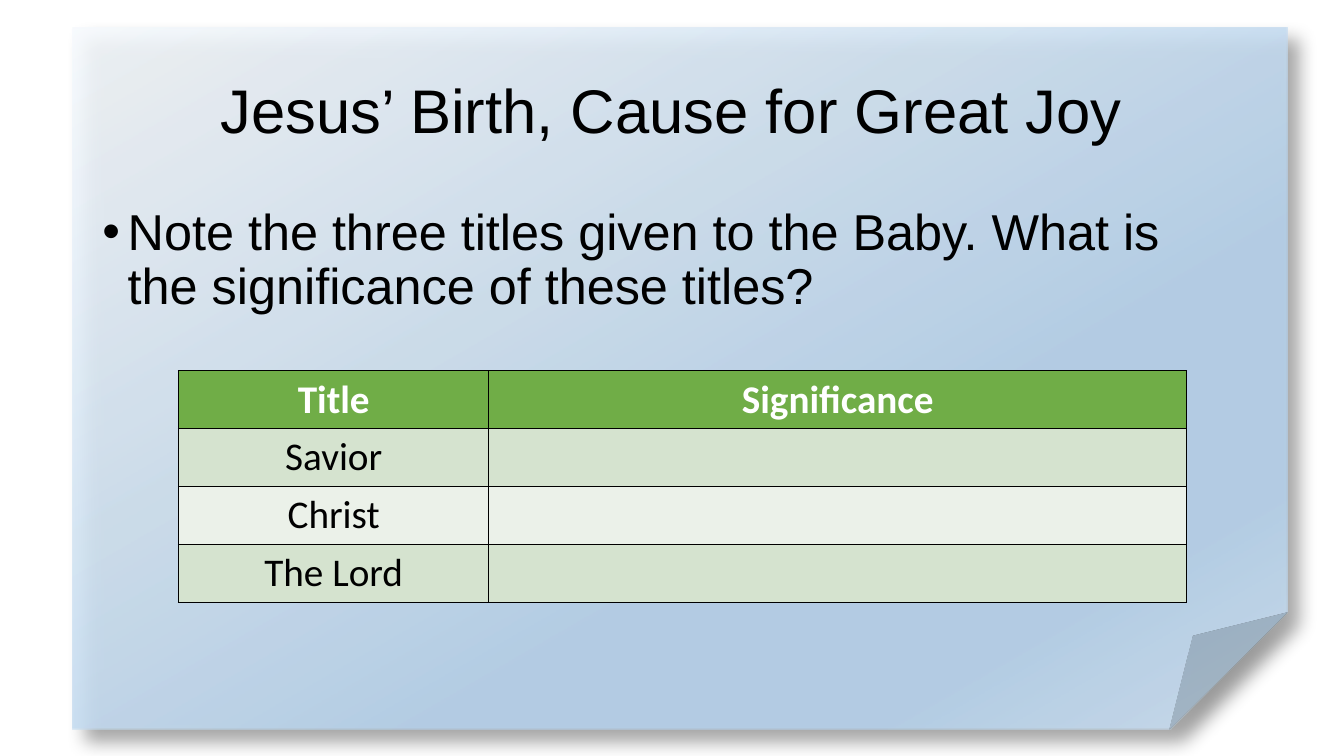
"""Build a slide with a folded sheet, a question and a table of titles."""
from dataclasses import dataclass

import lxml.etree
import pptx
import pptx.dml.color
import pptx.enum.shapes
import pptx.enum.text
import pptx.oxml
import pptx.oxml.ns
import pptx.util

Cm = pptx.util.Cm
Pt = pptx.util.Pt
ALIGN = pptx.enum.text.PP_ALIGN
ANCHOR = pptx.enum.text.MSO_ANCHOR


@dataclass(frozen=True)
class Box:
    left: float
    top: float
    width: float
    height: float

    def lengths(self):
        return Cm(self.left), Cm(self.top), Cm(self.width), Cm(self.height)


@dataclass(frozen=True)
class TableRow:
    title: str
    significance: str
    fill: str
    color: str = "000000"
    bold: bool = False


@dataclass(frozen=True)
class GradientStop:
    position: int
    color: str


SHEET = Box(1.83, 0.69, 30.61, 17.7)
TITLE = Box(2.33, 1.01, 29.21, 3.68)
QUESTION = Box(2.33, 5.08, 29.21, 12.09)
TABLE = Box(4.5, 9.34, 25.4, 5.84)
COLUMN_WIDTHS = (7.82, 17.58)
STOPS = (
    GradientStop(0, "F7FAFD"),
    GradientStop(64, "B5D2EC"),
    GradientStop(83, "B5D2EC"),
    GradientStop(100, "CEE1F2"),
)
ROWS = (
    TableRow("Title", "Significance", "70AD47", "FFFFFF", True),
    TableRow("Savior", "", "D5E3CF"),
    TableRow("Christ", "", "EBF1E9"),
    TableRow("The Lord", "", "D5E3CF"),
)


def rgb(value: str) -> pptx.dml.color.RGBColor:
    return pptx.dml.color.RGBColor.from_string(value)


def xml(markup: str):
    head, rest = markup.split(">", 1)
    slash = "/" if head.endswith("/") else ""
    return pptx.oxml.parse_xml(
        f"{head.rstrip('/')} {pptx.oxml.ns.nsdecls('a')}{slash}>{rest}"
    )


def write(frame, text: str, *, size: float, font: str = "Arial",
          color: str = "000000", bold: bool = False, align=ALIGN.LEFT,
          spacing: float = 1.0, bullet: str = "") -> None:
    paragraph = frame.paragraphs[0]
    paragraph.alignment = align
    paragraph.line_spacing = spacing
    paragraph.space_before = Pt(0)
    if bullet:
        properties = paragraph._p.get_or_add_pPr()
        properties.set("marL", str(Cm(0.64)))
        properties.set("indent", str(-Cm(0.64)))
        properties.append(xml('<a:buFont typeface="Arial"/>'))
        properties.append(xml(f'<a:buChar char="{bullet}"/>'))
    run = paragraph.add_run()
    run.text = text
    run.font.size = Pt(size)
    run.font.name = font
    run.font.bold = bold
    run.font.color.rgb = rgb(color)


def draw_sheet(slide, box: Box) -> None:
    sheet = slide.shapes.add_shape(
        pptx.enum.shapes.MSO_SHAPE.FOLDED_CORNER, *box.lengths())
    sheet.line.fill.background()
    sheet.fill.gradient()
    sheet.fill.gradient_angle = 0
    gradient = sheet.element.spPr.find(pptx.oxml.ns.qn("a:gradFill"))
    stops = "".join(
        f'<a:gs pos="{stop.position * 1000}"><a:srgbClr val="{stop.color}">'
        '<a:alpha val="87000"/></a:srgbClr></a:gs>' for stop in STOPS)
    gradient.getparent().replace(gradient, xml(
        f'<a:gradFill><a:gsLst>{stops}</a:gsLst>'
        '<a:lin ang="3600000" scaled="0"/></a:gradFill>'))
    sheet.element.spPr.append(xml(
        f'<a:effectLst><a:outerShdw blurRad="{Pt(13)}" dist="{Pt(13)}" '
        'dir="2700000" algn="tl" rotWithShape="0"><a:srgbClr val="000000">'
        '<a:alpha val="40000"/></a:srgbClr></a:outerShdw></a:effectLst>'))
    sheet.element.getparent().insert(2, sheet.element)


def place_title(slide, box: Box) -> None:
    title = slide.shapes.title
    title.left, title.top, title.width, title.height = box.lengths()
    title.text_frame.vertical_anchor = ANCHOR.MIDDLE
    write(title.text_frame, "Jesus’ Birth, Cause for Great Joy",
          size=44, align=ALIGN.CENTER, spacing=0.9)


def place_question(slide, box: Box) -> None:
    frame = slide.shapes.add_textbox(*box.lengths()).text_frame
    frame.word_wrap = True
    write(frame, "Note the three titles given to the Baby. "
          "What is the significance of these titles?",
          size=36, spacing=0.9, bullet="•")


def add_borders(cell) -> None:
    properties = cell._tc.get_or_add_tcPr()
    for index, side in enumerate(("lnL", "lnR", "lnT", "lnB")):
        properties.insert(index, xml(
            f'<a:{side} w="{Pt(1)}"><a:solidFill><a:srgbClr val="000000"/>'
            f'</a:solidFill></a:{side}>'))


def draw_table(slide, box: Box) -> None:
    table = slide.shapes.add_table(
        len(ROWS), len(COLUMN_WIDTHS), *box.lengths()).table
    for column, width in zip(table.columns, COLUMN_WIDTHS):
        column.width = Cm(width)
    for row, content in zip(table.rows, ROWS):
        row.height = Cm(box.height / len(ROWS))
        for cell, text in zip(row.cells, (content.title, content.significance)):
            cell.fill.solid()
            cell.fill.fore_color.rgb = rgb(content.fill)
            add_borders(cell)
            if text:
                write(cell.text_frame, text, size=28, font="Calibri",
                      color=content.color, bold=content.bold,
                      align=ALIGN.CENTER)


def main() -> None:
    deck = pptx.Presentation()
    deck.slide_width, deck.slide_height = Cm(33.87), Cm(19.05)
    slide = deck.slides.add_slide(deck.slide_layouts.get_by_name("Title Only"))
    draw_sheet(slide, SHEET)
    place_title(slide, TITLE)
    place_question(slide, QUESTION)
    draw_table(slide, TABLE)
    deck.save("out.pptx")


if __name__ == "__main__":
    main()
